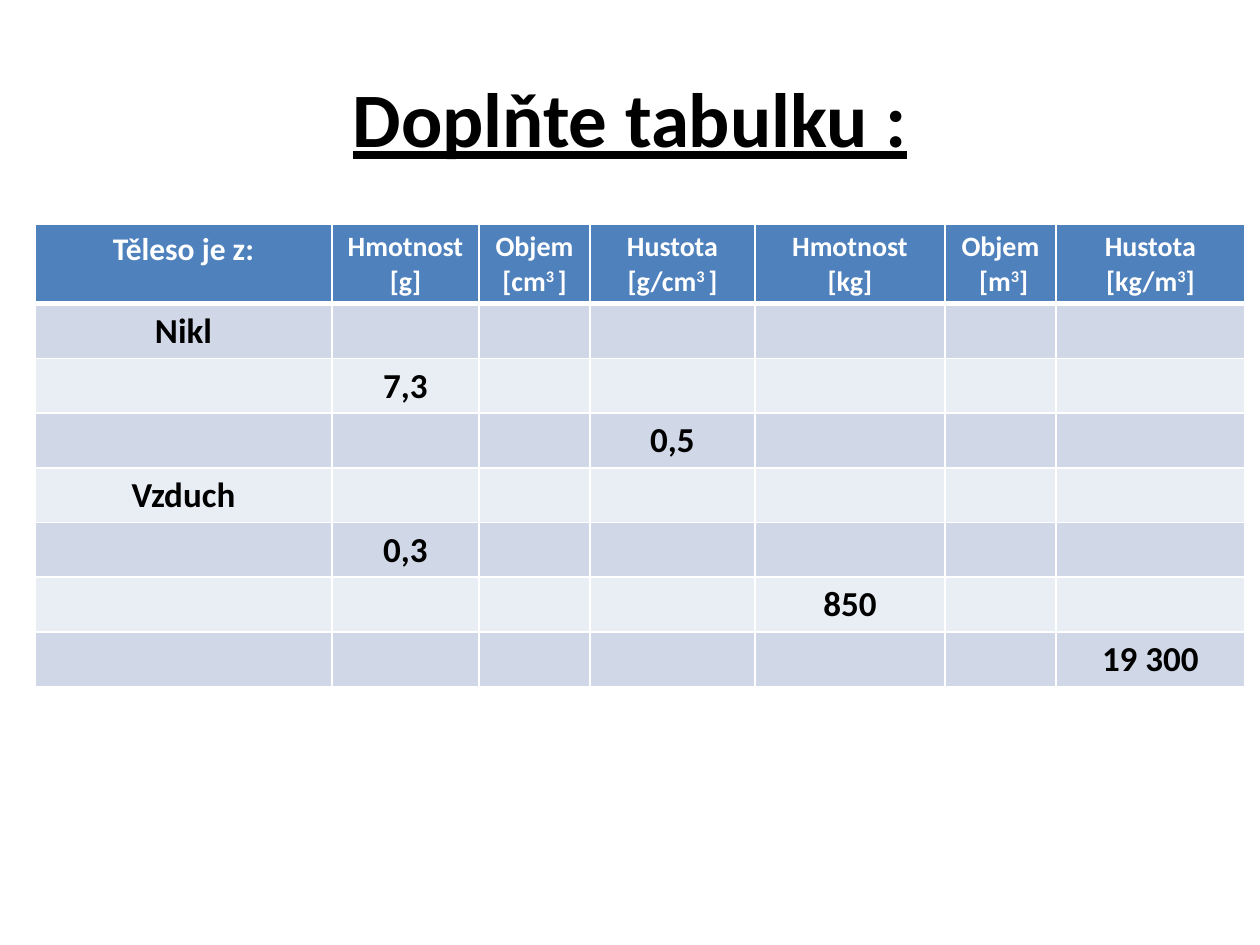
from lxml import etree
from pptx import Presentation
from pptx.dml.color import RGBColor
from pptx.enum.text import MSO_ANCHOR, PP_ALIGN
from pptx.oxml.ns import qn
from pptx.util import Pt

PX = 914400 // 126
FONT = "Calibri"
BLACK = RGBColor(0x00, 0x00, 0x00)
WHITE = RGBColor(0xFF, 0xFF, 0xFF)
BLUE = RGBColor(0x4F, 0x81, 0xBD)
BANDS = (RGBColor(0xD0, 0xD8, 0xE8), RGBColor(0xE9, 0xED, 0xF4))

TITLE = "Doplňte tabulku :"
# Each header is a list of paragraphs; in a paragraph every second run is superscript.
HEADERS = [
    [["Těleso je z:"]],
    [["Hmotnost [g]"]],
    [["Objem [cm", "3 ", "]"]],
    [["Hustota [g/cm", "3 ", "]"]],
    [["Hmotnost [kg]"]],
    [["Objem"], [" [m", "3", "]"]],
    [["Hustota"], ["[kg/m", "3", "]"]],
]
HEADER_SIZES = [18] + [16] * 6
# The one known value of each row: column and text.
KNOWN_VALUES = [(0, "Nikl"), (1, "7,3"), (3, "0,5"), (0, "Vzduch"),
                (1, "0,3"), (4, "850"), (6, "19 300")]
COLUMN_WIDTHS = [297, 147, 111, 165, 190, 111, 189]
ROW_HEIGHT = 52


def style_run(run, size, color):
    run.font.name = FONT
    run.font.size = Pt(size)
    run.font.bold = True
    run.font.color.rgb = color


def write_paragraph(paragraph, parts, size, color):
    paragraph.alignment = PP_ALIGN.CENTER
    for index, part in enumerate(parts):
        run = paragraph.add_run()
        run.text = part
        style_run(run, size, color)
        if index % 2:
            run.font._element.set("baseline", "30000")


def style_cell(cell, fill, bottom_width):
    """Give the cell white borders and a fill; borders come first in the XML."""
    properties = cell._tc.get_or_add_tcPr()
    for side, width in (("L", 1), ("R", 1), ("T", 1), ("B", bottom_width)):
        line = etree.SubElement(properties, qn(f"a:ln{side}"), w=str(Pt(width)))
        solid = etree.SubElement(line, qn("a:solidFill"))
        etree.SubElement(solid, qn("a:srgbClr"), val=str(WHITE))
    cell.fill.solid()
    cell.fill.fore_color.rgb = fill


def add_title(slide):
    title = slide.shapes.add_textbox(63 * PX, 38 * PX, 1134 * PX, 157 * PX)
    frame = title.text_frame
    frame.word_wrap = True
    frame.vertical_anchor = MSO_ANCHOR.MIDDLE
    write_paragraph(frame.paragraphs[0], [TITLE], 44, BLACK)
    frame.paragraphs[0].runs[0].font.underline = True


def add_density_table(slide):
    row_count = len(KNOWN_VALUES) + 1
    table = slide.shapes.add_table(
        row_count, len(HEADERS), 35 * PX, 224 * PX,
        sum(COLUMN_WIDTHS) * PX, row_count * ROW_HEIGHT * PX).table
    for column, width in zip(table.columns, COLUMN_WIDTHS):
        column.width = width * PX
    for row in table.rows:
        row.height = ROW_HEIGHT * PX

    for column, (header, size) in enumerate(zip(HEADERS, HEADER_SIZES)):
        cell = table.cell(0, column)
        style_cell(cell, BLUE, 3)
        frame = cell.text_frame
        for index, parts in enumerate(header):
            paragraph = frame.add_paragraph() if index else frame.paragraphs[0]
            write_paragraph(paragraph, parts, size, WHITE)

    for index, (known_column, value) in enumerate(KNOWN_VALUES):
        for column in range(len(HEADERS)):
            style_cell(table.cell(index + 1, column), BANDS[index % 2], 1)
        known_cell = table.cell(index + 1, known_column)
        write_paragraph(known_cell.text_frame.paragraphs[0], [value], 20, BLACK)


def main():
    presentation = Presentation()
    presentation.slide_width = 1260 * PX
    presentation.slide_height = 945 * PX
    slide = presentation.slides.add_slide(presentation.slide_layouts[6])
    add_title(slide)
    add_density_table(slide)
    presentation.save("out.pptx")


if __name__ == "__main__":
    main()
